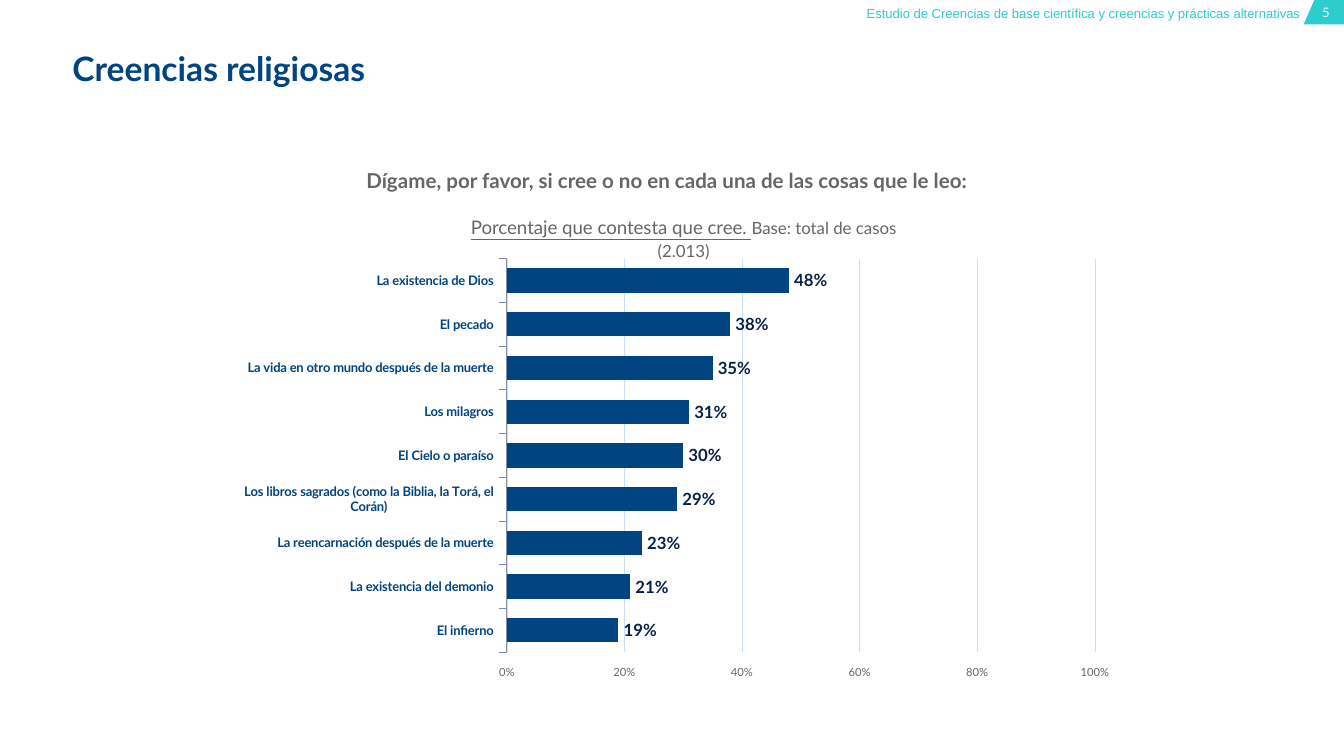
from dataclasses import dataclass

from lxml import etree
from pptx import Presentation
from pptx import util as u
from pptx.chart import data as chart_data
from pptx.dml.color import RGBColor
from pptx.enum import chart as charts
from pptx.enum import text
from pptx.oxml import ns

NAVY, TEAL, GREY, WHITE = "004481", "2DCCCD", "666666", "FFFFFF"


@dataclass
class Span:
    words: str
    size: float
    color: str
    bold: bool = False
    underline: bool = False
    font: str = "Lato"


@dataclass
class TextBlock:
    left: float
    top: float
    width: float
    height: float
    spans: list[Span]
    align: text.PP_ALIGN = text.PP_ALIGN.CENTER
    inset: tuple[float, float] = (0, 0)
    line_spacing: float = 1.0


BELIEFS = [
    ("El infierno", 0.19),
    ("La existencia del demonio", 0.21),
    ("La reencarnación después de la muerte", 0.23),
    ("Los libros sagrados (como la Biblia, la Torá, el Corán)", 0.29),
    ("El Cielo o paraíso", 0.30),
    ("Los milagros", 0.31),
    ("La vida en otro mundo después de la muerte", 0.35),
    ("El pecado", 0.38),
    ("La existencia de Dios", 0.48),
]

TITLE = TextBlock(1.37, 0.91, 22.38, 0.94, [Span("Creencias religiosas", 18, NAVY, bold=True)],
                  align=text.PP_ALIGN.LEFT)
BLOCKS = [
    TextBlock(24.77, 0.08, 0.58, 0.3, [Span("5", 7, WHITE)]),
    TextBlock(16.26, 0.1, 8.31, 0.3, [
        Span("Estudio de Creencias de base científica y creencias y prácticas alternativas",
             7, TEAL, font="Arial")], align=text.PP_ALIGN.RIGHT),
    TextBlock(8.36, 3.91, 9.12, 0.71, [
        Span("Porcentaje que contesta que cree. ", 10, GREY, underline=True),
        Span("Base: total de casos (2.013)", 9, GREY)],
        inset=(0.25, 0.13), line_spacing=1.11),
    TextBlock(2.31, 3.18, 20.6, 0.61, [
        Span("Dígame, por favor, si cree o no en cada una de las cosas que le leo:",
             11, GREY, bold=True)]),
]


def rgb(value: str) -> RGBColor:
    return RGBColor.from_string(value)


def style_font(font, size: float, color: str, bold: bool = False, name: str = "Lato") -> None:
    font.name = name
    font.size = u.Pt(size)
    font.bold = bold
    font.color.rgb = rgb(color)


def fill_text(box, block: TextBlock) -> None:
    box.left, box.top = u.Cm(block.left), u.Cm(block.top)
    box.width, box.height = u.Cm(block.width), u.Cm(block.height)
    frame = box.text_frame
    frame.word_wrap = True
    frame.auto_size = text.MSO_AUTO_SIZE.NONE
    frame.vertical_anchor = text.MSO_ANCHOR.TOP
    frame.margin_left = frame.margin_right = u.Cm(block.inset[0])
    frame.margin_top = frame.margin_bottom = u.Cm(block.inset[1])
    para = frame.paragraphs[0]
    para.alignment = block.align
    para.line_spacing = block.line_spacing
    for span in block.spans:
        run = para.add_run()
        run.text = span.words
        style_font(run.font, span.size, span.color, span.bold, span.font)
        run.font.underline = span.underline


def add_page_tab(page) -> None:
    builder = page.shapes.build_freeform(u.Cm(24.84), 0)
    corners = [(25.4, 0), (25.4, 0.46), (24.64, 0.46)]
    builder.add_line_segments([(u.Cm(x), u.Cm(y)) for x, y in corners])
    tab = builder.convert_to_shape()
    tab.shadow.inherit = False
    tab.fill.solid()
    tab.fill.fore_color.rgb = rgb(TEAL)
    tab.line.fill.background()


def set_plot_area(chart, **fractions: float) -> None:
    plot_area = chart.plots[0]._element.getparent()
    for old in plot_area.findall(ns.qn("c:layout")):
        plot_area.remove(old)
    layout = etree.Element(ns.qn("c:layout"))
    plot_area.insert(0, layout)
    manual = etree.SubElement(layout, ns.qn("c:manualLayout"))
    settings = {"layoutTarget": "inner", "xMode": "edge", "yMode": "edge", **fractions}
    for tag, value in settings.items():
        etree.SubElement(manual, ns.qn(f"c:{tag}")).set("val", str(value))


def add_beliefs_chart(page) -> None:
    data = chart_data.CategoryChartData(number_format="0%")
    data.categories = [name for name, _ in BELIEFS]
    data.add_series("Series 1", [share for _, share in BELIEFS])
    chart = page.shapes.add_chart(charts.XL_CHART_TYPE.BAR_CLUSTERED, u.Cm(4.27), u.Cm(4.57),
                                  u.Cm(16.69), u.Cm(10.62), data).chart
    chart.has_legend = False
    chart.has_title = False
    style_font(chart.font, 9, NAVY)
    set_plot_area(chart, x=0.32, y=0.03, w=0.67, h=0.7)

    plot = chart.plots[0]
    plot.gap_width = 80
    plot.vary_by_categories = False
    bars = plot.series[0].format
    bars.fill.solid()
    bars.fill.fore_color.rgb = rgb(NAVY)
    plot.has_data_labels = True
    labels = plot.data_labels
    labels.show_value = True
    labels.number_format = "0%"
    labels.number_format_is_linked = False
    labels.position = charts.XL_LABEL_POSITION.OUTSIDE_END
    style_font(labels.font, 9, "072146", bold=True)

    names = chart.category_axis
    names.major_tick_mark = charts.XL_TICK_MARK.OUTSIDE
    names.format.line.color.rgb = rgb("7F8FA9")
    names.format.line.width = u.Pt(0.5)
    style_font(names.tick_labels.font, 7, NAVY, bold=True)

    shares = chart.value_axis
    shares.minimum_scale, shares.maximum_scale, shares.major_unit = 0, 1, 0.2
    shares.major_tick_mark = charts.XL_TICK_MARK.OUTSIDE
    shares.format.line.fill.background()
    shares.major_gridlines.format.line.color.rgb = rgb("C5E1F8")
    shares.major_gridlines.format.line.width = u.Pt(0.25)
    shares.tick_labels.number_format = "0%"
    shares.tick_labels.number_format_is_linked = False
    style_font(shares.tick_labels.font, 6, GREY)


def main() -> None:
    deck = Presentation()
    deck.slide_width, deck.slide_height = u.Cm(25.4), u.Cm(14.28)
    page = deck.slides.add_slide(deck.slide_layouts[5])
    add_page_tab(page)
    fill_text(page.shapes.title, TITLE)
    for block in BLOCKS:
        fill_text(page.shapes.add_textbox(0, 0, 0, 0), block)
    add_beliefs_chart(page)
    deck.save("out.pptx")


if __name__ == "__main__":
    main()
